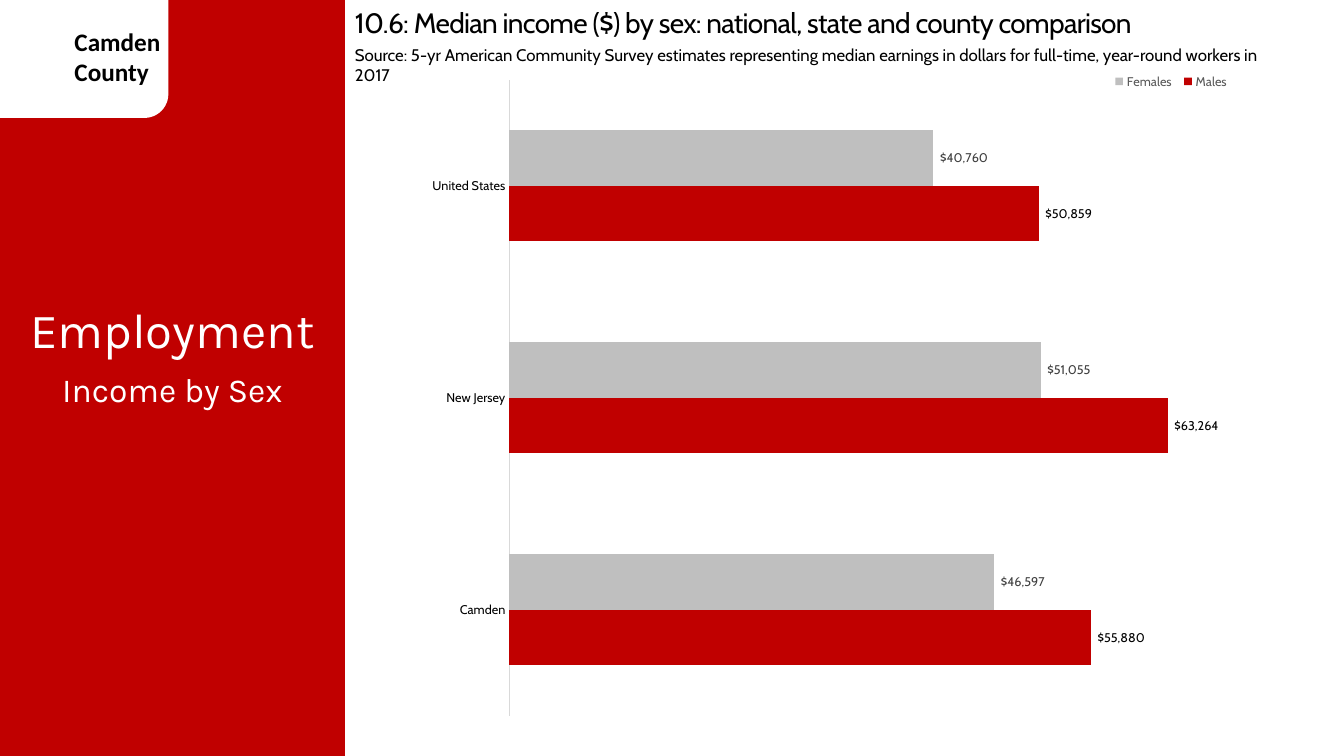
from lxml import etree
from pptx import Presentation
from pptx.chart.data import CategoryChartData
from pptx.dml.color import RGBColor
from pptx.enum.chart import XL_CHART_TYPE, XL_LABEL_POSITION, XL_LEGEND_POSITION, XL_TICK_MARK
from pptx.enum.shapes import MSO_SHAPE
from pptx.enum.text import MSO_ANCHOR, MSO_AUTO_SIZE, PP_ALIGN
from pptx.oxml.ns import qn
from pptx.util import Inches, Pt

RED = RGBColor(0xC0, 0x00, 0x00)
WHITE = RGBColor(0xFF, 0xFF, 0xFF)
BLACK = RGBColor(0x00, 0x00, 0x00)
SILVER = RGBColor(0xBF, 0xBF, 0xBF)
AXIS_GREY = RGBColor(0xD9, 0xD9, 0xD9)
LEGEND_GREY = RGBColor(0x59, 0x59, 0x59)
LABEL_GREY = RGBColor(0x40, 0x40, 0x40)
RECT, ROUNDED = MSO_SHAPE.RECTANGLE, MSO_SHAPE.ROUNDED_RECTANGLE
LEFT, CENTER = PP_ALIGN.LEFT, PP_ALIGN.CENTER
NO_TICK = XL_TICK_MARK.NONE
DOLLARS = r'_("$"* #,##0_);_("$"* \(#,##0\);_("$"* "-"??_);_(@_)'

REGIONS = ["Camden", "New Jersey", "United States"]
# name, values, bar colour, label colour
SERIES = [
    ("Males", (55880, 63264, 50859), RED, BLACK),
    ("Females", (46597, 51055, 40760), SILVER, LABEL_GREY),
]


def set_font(font, name, size, color, **extra):
    values = dict(name=name, size=Pt(size), bold=False, **{})
    values.update(extra)
    for key, value in values.items():
        setattr(font, key, value)
    font.color.rgb = color


def place(sp, x, y, w, h):
    sp.left, sp.top, sp.width, sp.height = (Inches(v) for v in (x, y, w, h))


def add_block(s, shape, x, y, w, h, color):
    sp = s.shapes.add_shape(shape, *(Inches(v) for v in (x, y, w, h)))
    sp.shadow.inherit = False
    sp.fill.solid()
    sp.fill.fore_color.rgb = color
    sp.line.fill.background()


def write(sp, lines, name, size, color, align=LEFT, **extra):
    tf = sp.text_frame
    tf.word_wrap = True
    tf.auto_size = MSO_AUTO_SIZE.NONE
    tf.vertical_anchor = MSO_ANCHOR.TOP
    for i, line in enumerate(lines):
        p = tf.paragraphs[0] if i == 0 else tf.add_paragraph()
        p.alignment = align
        r = p.add_run()
        r.text = line
        set_font(r.font, name, size, color, **extra)


def add_text(s, x, y, w, h, lines, *style, **extra):
    sp = s.shapes.add_textbox(*(Inches(v) for v in (x, y, w, h)))
    write(sp, lines, *style, **extra)


def add_sidebar(s, x, y, w, h):
    add_block(s, RECT, x, y, w, h, RED)
    # County tab, bleeding off the top left corner
    add_block(s, ROUNDED, x - 0.33, y - 0.25, 2, 1.42, WHITE)
    add_text(s, x + 0.64, y + 0.21, 1.17, 0.71, ["Camden", "County"],
             "Calibri", 18, BLACK, bold=True)
    # Section name and topic
    add_text(s, x, y + 2.92, w, 0.69, ["Employment"], "Karla", 35, WHITE, CENTER)
    add_text(s, x, y + 3.61, w, 0.5, ["Income by Sex"], "Karla", 24, WHITE, CENTER)


def add_heading(s, x, y, w):
    title = s.shapes.title
    place(title, x, y, w, 0.44)
    write(title, ["10.6: Median income ($) by sex: national, state and county comparison"],
          "Cabin", 20, BLACK)
    # Tightened letter spacing, in hundredths of a point
    title.text_frame.paragraphs[0].runs[0].font._element.set("spc", "-50")
    add_text(s, x, y + 0.39, 9.19, 0.5,
             ["Source: 5-yr American Community Survey estimates representing median "
              "earnings in dollars for full-time, year-round workers in 2017"],
             "Cabin", 12, BLACK)


def set_layout(element, index, x, y, w, h, inner=False):
    for old in element.findall(qn("c:layout")):
        element.remove(old)
    layout = etree.Element(qn("c:layout"))
    manual = etree.SubElement(layout, qn("c:manualLayout"))
    target = [("layoutTarget", "inner")] if inner else []
    for tag, value in target + [("xMode", "edge"), ("yMode", "edge"),
                                ("x", x), ("y", y), ("w", w), ("h", h)]:
        etree.SubElement(manual, qn("c:" + tag)).set("val", str(value))
    element.insert(index, layout)


def add_income_chart(s, x, y, w, h):
    data = CategoryChartData(number_format=DOLLARS)
    data.categories = REGIONS
    for name, values, _, _ in SERIES:
        data.add_series(name, values)
    chart = s.shapes.add_chart(XL_CHART_TYPE.BAR_CLUSTERED,
                               *(Inches(v) for v in (x, y, w, h)), data).chart
    chart.has_title = False
    set_font(chart.font, "Calibri", 10, BLACK)

    # Bars and their labels
    plot = chart.plots[0]
    plot.gap_width, plot.overlap, plot.vary_by_categories = 182, 0, False
    for series, (_, _, fill, label_color) in zip(plot.series, SERIES):
        series.format.fill.solid()
        series.format.fill.fore_color.rgb = fill
        labels = series.data_labels
        labels.show_value = True
        labels.number_format, labels.number_format_is_linked = DOLLARS, False
        labels.position = XL_LABEL_POSITION.OUTSIDE_END
        set_font(labels.font, "Cabin", 9, label_color)

    # Axes
    regions, income = chart.category_axis, chart.value_axis
    regions.major_tick_mark = regions.minor_tick_mark = NO_TICK
    regions.format.line.color.rgb = AXIS_GREY
    regions.format.line.width = Pt(0.75)
    set_font(regions.tick_labels.font, "Cabin", 9, BLACK)
    income.minimum_scale, income.maximum_scale = 0, 70000
    income.has_major_gridlines = False
    income.visible = False

    # Legend above the bars at the right
    chart.has_legend = True
    legend = chart.legend
    legend.position = XL_LEGEND_POSITION.BOTTOM
    legend.include_in_layout = False
    set_font(legend.font, "Cabin", 9, LEGEND_GREY)
    set_layout(legend._element, 1, 0.83, 0, 0.15, 0.05)
    set_layout(chart._chartSpace.chart.plotArea, 0, 0.13, 0.023, 0.853, 0.943, inner=True)


def main():
    prs = Presentation()
    prs.slide_width, prs.slide_height = Inches(13.33), Inches(7.5)
    s = prs.slides.add_slide(prs.slide_layouts[5])
    add_sidebar(s, 0, 0, 3.42, 7.5)
    add_heading(s, 3.42, 0, 9.86)
    add_income_chart(s, 3.95, 0.64, 8.47, 6.69)
    prs.save("out.pptx")


if __name__ == "__main__":
    main()
